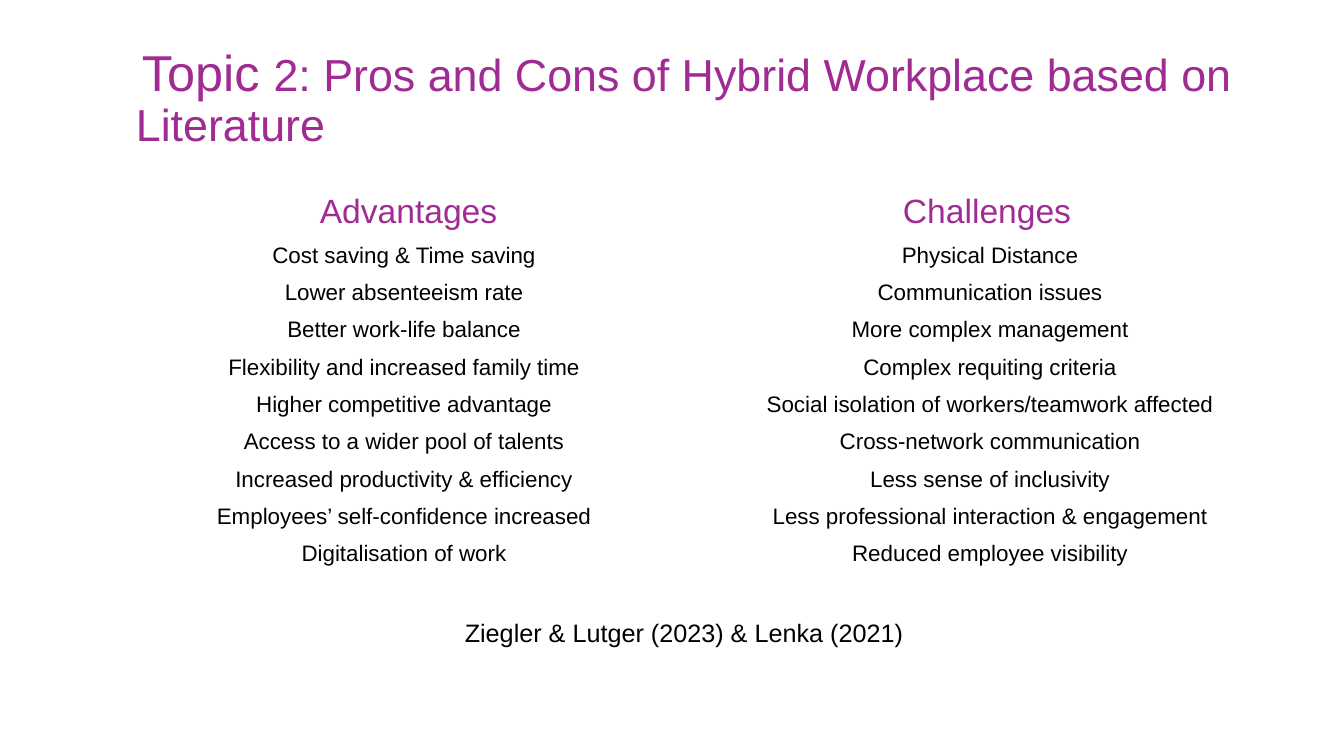
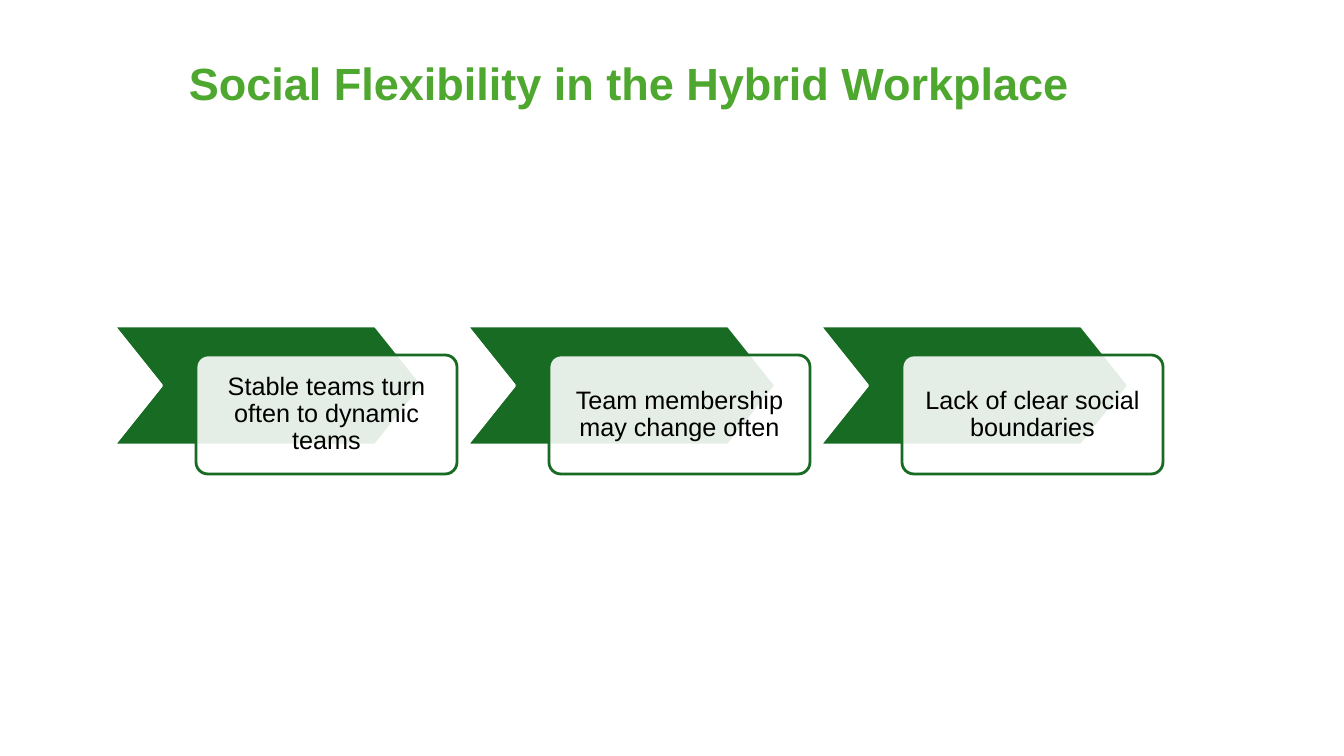
from lxml import etree
from pptx import Presentation
from pptx.dml.color import RGBColor
from pptx.enum.shapes import MSO_SHAPE as Shape
from pptx.enum.text import MSO_ANCHOR as Anchor, PP_ALIGN as Align
from pptx.oxml.ns import qn
from pptx.util import Emu, Pt

PX = 914400 / 100.8
FONT = "Arial"
COLORS = {
    "purple": "A02B93",
    "light_green": "4EA72E",
    "green": "176B22",
    "black": "000000",
    "white": "FFFFFF",
}


def px(*lengths):
    return [Emu(round(length * PX)) for length in lengths]


def style(paragraph, size, color, spacing, align=Align.LEFT, bold=False):
    paragraph.alignment = align
    paragraph.line_spacing = spacing
    font = paragraph.font
    font.name, font.size, font.bold = FONT, Pt(size), bold
    font.color.rgb = RGBColor.from_string(COLORS[color])


prs = Presentation()
prs.slide_width, prs.slide_height = px(1344, 756)
blank = prs.slide_layouts[6]
pros_cons, flexibility = [prs.slides.add_slide(blank) for _ in range(2)]

# Titles: slide, box, anchor, size, colour, line spacing, bold, text
titles = [
    (pros_cons, (77, 43, 1237, 112), Anchor.TOP, 32, "purple", 0.9, False,
     ["Topic ", "2: Pros and Cons of Hybrid Workplace based on Literature"]),
    (flexibility, (179, 43, 1155, 79), Anchor.MIDDLE, 32.2, "light_green", 1.0, True,
     ["Social Flexibility in the Hybrid Workplace"]),
]
headings = []
for slide, box, anchor, size, color, spacing, bold, parts in titles:
    frame = slide.shapes.add_textbox(*px(*box)).text_frame
    frame.word_wrap = True
    frame.vertical_anchor = anchor
    heading = frame.paragraphs[0]
    for part in parts:
        heading.add_run().text = part
    style(heading, size, color, spacing, bold=bold)
    headings.append(heading)

# The first title opens with a larger word and a small first-line indent
topic = headings[0]
topic.runs[0].font.size = Pt(36)
margin, indent = px(49, 6)
properties = topic._p.get_or_add_pPr()
properties.set("marL", str(margin))
properties.set("indent", str(indent))

# Advantages and challenges
rows = [
    ("Advantages", "Challenges"),
    ("Cost saving & Time saving", "Physical Distance"),
    ("Lower absenteeism rate", "Communication issues"),
    ("Better work-life balance", "More complex management"),
    ("Flexibility and increased family time", "Complex requiting criteria"),
    ("Higher competitive advantage", "Social isolation of workers/teamwork affected"),
    ("Access to a wider pool of talents", "Cross-network communication"),
    ("Increased productivity & efficiency", "Less sense of inclusivity"),
    ("Employees’ self-confidence increased", "Less professional interaction & engagement"),
    ("Digitalisation of work", "Reduced employee visibility"),
    ("Ziegler & Lutger (2023) & Lenka (2021)", ""),
]
HEADER, SOURCE = 0, len(rows) - 1
# Body rows share 336 px, so every third one is a pixel taller
row_heights = [50] + [37, 37, 38] * 3 + [122]
text_sizes = {HEADER: 24, SOURCE: 18}
column_margins = [(7, 7), (6, 0)]
header_margins = [(16, 7), (0, 0)]

comparison = pros_cons.shapes.add_table(
    len(rows), 2, *px(101, 187, 1166, sum(row_heights))).table
comparison.first_row = comparison.horz_banding = False
for column, width in zip(comparison.columns, px(606, 560)):
    column.width = width
comparison.cell(SOURCE, 0).merge(comparison.cell(SOURCE, 1))

for r, row in enumerate(rows):
    comparison.rows[r].height = px(row_heights[r])[0]
    for c, text in enumerate(row):
        cell = comparison.cell(r, c)
        cell.fill.background()
        left, right = (header_margins if r == HEADER else column_margins)[c]
        cell.margin_left, cell.margin_right, cell.margin_top, cell.margin_bottom = px(left, right, 0, 0)
        cell.vertical_anchor = Anchor.MIDDLE
        cell.text = text
        style(cell.text_frame.paragraphs[0], text_sizes.get(r, 16),
              "purple" if r == HEADER else "black", 1.0, Align.CENTER)

# Chevron process with a translucent card on each step
steps = [
    "Stable teams turn often to dynamic teams",
    "Team membership may change often",
    "Lack of clear social boundaries",
]
for i, step in enumerate(steps):
    x = 114 + 353 * i
    parts = [
        (Shape.CHEVRON, (x, 326, 309, 119), 0.4, "green", "white"),
        (Shape.ROUNDED_RECTANGLE, (x + 82, 355, 261, 119), 0.1, "white", "green"),
    ]
    for kind, box, adjustment, fill, line in parts:
        card = flexibility.shapes.add_shape(kind, *px(*box))
        card.adjustments[0] = adjustment
        card.shadow.inherit = False
        card.fill.solid()
        card.fill.fore_color.rgb = RGBColor.from_string(COLORS[fill])
        card.line.color.rgb = RGBColor.from_string(COLORS[line])
        card.line.width = Pt(2)

    # The card is the last part drawn
    fill_color = card._element.spPr.find(qn("a:solidFill")).find(qn("a:srgbClr"))
    etree.SubElement(fill_color, qn("a:alpha")).set("val", "89000")
    frame = card.text_frame
    frame.word_wrap = True
    frame.vertical_anchor = Anchor.MIDDLE
    frame.margin_left, frame.margin_right, frame.margin_top, frame.margin_bottom = px(14, 14, 14, 14)
    frame.text = step
    style(frame.paragraphs[0], 18, "black", 0.9, Align.CENTER)

prs.save("out.pptx")
